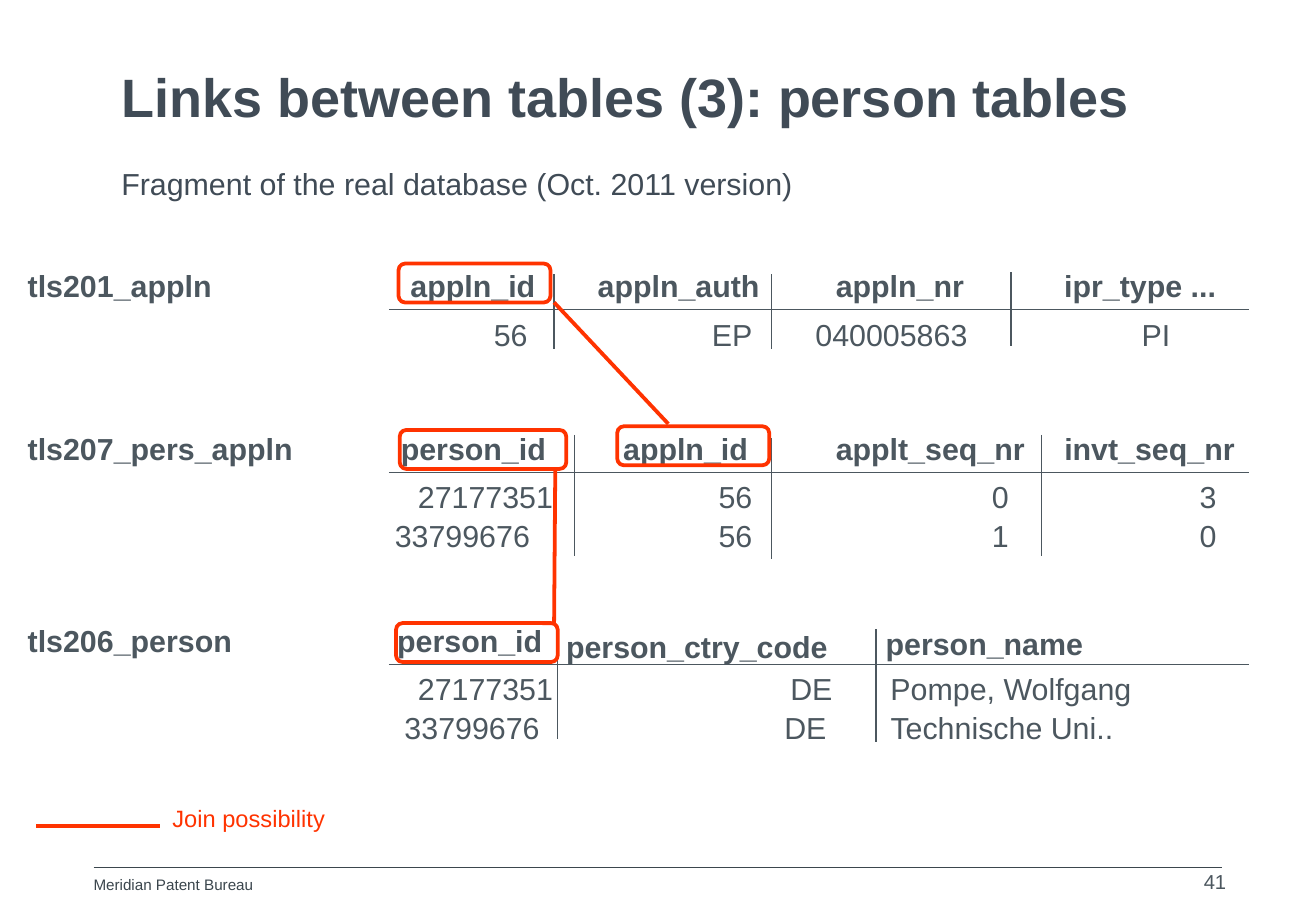
from dataclasses import dataclass

from lxml import etree
from pptx import Presentation
from pptx.dml.color import RGBColor
from pptx.enum.shapes import MSO_CONNECTOR, MSO_SHAPE
from pptx.enum.text import MSO_ANCHOR, PP_ALIGN
from pptx.oxml.ns import qn
from pptx.util import Inches, Pt

LEFT, RIGHT = PP_ALIGN.LEFT, PP_ALIGN.RIGHT
TOP, MIDDLE = MSO_ANCHOR.TOP, MSO_ANCHOR.MIDDLE
STRAIGHT, ROUNDED = MSO_CONNECTOR.STRAIGHT, MSO_SHAPE.ROUNDED_RECTANGLE


@dataclass(frozen=True)
class Theme:
    font: str = "Arial"
    title: str = "404B56"
    ink: str = "4C575F"
    footer: str = "3B464D"
    join: str = "FF3300"
    title_size: int = 32
    body_size: int = 18
    legend_size: int = 14
    number_size: int = 12
    footer_size: int = 9
    rule_width: float = 0.75
    join_width: float = 2.25


THEME = Theme()
WIDTH, HEIGHT = 10.83, 7.5
NAME_LEFT, RULE_LEFT, RULE_RIGHT = 0.13, 3.2, 10.28
LINE_HEIGHT, ROW_STEP = 0.4, 0.32

# Columns: (heading, left, width, rise above the rule), value alignment,
# then one (value, left, width) per row. Dividers: (x, top, bottom).
TABLES = [
    {
        "name": ("tls201_appln", 1.73),
        "rule": 2.55,
        "dividers": [(4.56, 2.26, 2.87), (6.35, 2.26, 2.87), (8.32, 2.24, 2.85)],
        "columns": [
            (("appln_id", 3.28, 1.24, 0.4), RIGHT, [("56", 3.96, 0.48)]),
            (("appln_auth", 4.82, 1.55, 0.4), RIGHT, [("EP", 5.69, 0.6)]),
            (("appln_nr", 6.78, 1.27, 0.4), RIGHT, [("040005863", 6.59, 1.47)]),
            (("ipr_type ...", 8.66, 1.46, 0.4), RIGHT, [("PI", 9.29, 0.44)]),
        ],
    },
    {
        "name": ("tls207_pers_appln", 2.4),
        "rule": 3.89,
        "dividers": [(4.73, 3.58, 4.58), (6.35, 3.61, 4.6), (8.57, 3.58, 4.58)],
        "columns": [
            (("person_id", 3.2, 1.41, 0.4), RIGHT,
             [("27177351", 3.32, 1.33), ("33799676", 3.13, 1.33)]),
            (("appln_id", 5.03, 1.24, 0.4), RIGHT,
             [("56", 5.81, 0.48), ("56", 5.81, 0.48)]),
            (("applt_seq_nr", 6.78, 1.77, 0.4), RIGHT,
             [("0", 8.06, 0.34), ("1", 8.06, 0.34)]),
            (("invt_seq_nr", 8.66, 1.62, 0.4), RIGHT,
             [("3", 9.77, 0.34), ("0", 9.77, 0.34)]),
        ],
    },
    {
        "name": ("tls206_person", 1.9),
        "rule": 5.47,
        "dividers": [(4.59, 5.15, 6.08), (7.21, 5.18, 6.11)],
        "columns": [
            (("person_id", 3.17, 1.41, 0.4), RIGHT,
             [("27177351", 3.32, 1.33), ("33799676", 3.21, 1.33)]),
            (("person_ctry_code", 4.56, 2.38, 0.35), RIGHT,
             [("DE", 6.35, 0.6), ("DE", 6.3, 0.6)]),
            (("person_name", 7.19, 1.84, 0.37), LEFT,
             [("Pompe, Wolfgang", 7.23, 2.2), ("Technische Uni..", 7.23, 2.05)]),
        ],
    },
]

# Key frames: (left, top, width)
KEY_FRAMES = [(3.28, 2.17, 1.25), (5.08, 3.51, 1.25), (3.29, 3.54, 1.37), (3.26, 5.13, 1.33)]
FRAME_HEIGHT = 0.32
JOIN_LINES = [(4.56, 2.49, 5.5, 3.49), (4.57, 3.86, 4.56, 5.13), (0.3, 6.8, 1.32, 6.8)]

# Texts outside the tables: text, (left, top, width, height), format
LABELS = [
    ("Meridian Patent Bureau", (0.77, 7.21, 1.84, 0.25),
     {"size": THEME.footer_size, "color": THEME.footer, "inset": 0}),
    ("41", (9.51, 7.14, 0.68, 0.24),
     {"size": THEME.number_size, "align": RIGHT, "anchor": MIDDLE, "wrap": True}),
    ("Links between tables (3): person tables", (0.9, 0.44, 9.47, 0.7),
     {"size": THEME.title_size, "color": THEME.title, "bold": True,
      "anchor": MIDDLE, "wrap": True}),
    ("Fragment of the real database (Oct. 2011 version)", (0.9, 1.31, 9.1, 0.47),
     {"color": THEME.title, "wrap": True}),
    ("Join possibility", (1.32, 6.57, 1.48, 0.34),
     {"size": THEME.legend_size, "color": THEME.join}),
]


def add_text(slide, text, box, size=THEME.body_size, color=THEME.ink, bold=False,
             align=LEFT, anchor=TOP, wrap=False, inset=None):
    frame = slide.shapes.add_textbox(*map(Inches, box)).text_frame
    frame.word_wrap = wrap
    frame.vertical_anchor = anchor
    if inset is not None:
        for side in ("left", "top", "right", "bottom"):
            setattr(frame, f"margin_{side}", Inches(inset))
    paragraph = frame.paragraphs[0]
    paragraph.alignment = align
    run = paragraph.add_run()
    run.text = text
    formats = {"name": THEME.font, "size": Pt(size), "bold": bold}
    for attribute, value in formats.items():
        setattr(run.font, attribute, value)
    run.font.color.rgb = RGBColor.from_string(color)


def style_line(shape, color, width):
    shape.line.color.rgb = RGBColor.from_string(color)
    shape.line.width = Pt(width)


def add_line(slide, ends, color=THEME.ink, width=THEME.rule_width):
    connector = slide.shapes.add_connector(STRAIGHT, *map(Inches, ends))
    style_line(connector, color, width)
    etree.SubElement(connector._element.spPr, qn("a:effectLst"))


def add_table_fragment(slide, table):
    """Draw one database table: name, rule, dividers, headings and values."""
    rule = table["rule"]
    name, name_width = table["name"]
    add_text(slide, name, (NAME_LEFT, rule - LINE_HEIGHT, name_width, LINE_HEIGHT), bold=True)
    add_line(slide, (RULE_LEFT, rule, RULE_RIGHT, rule))
    for x, top, bottom in table["dividers"]:
        add_line(slide, (x, top, x, bottom))
    for (heading, left, width, rise), align, values in table["columns"]:
        add_text(slide, heading, (left, rule - rise, width, LINE_HEIGHT), bold=True)
        for row, (value, value_left, value_width) in enumerate(values):
            box = (value_left, rule + row * ROW_STEP, value_width, LINE_HEIGHT)
            add_text(slide, value, box, align=align)


def add_key_frame(slide, left, top, width):
    shape = slide.shapes.add_shape(ROUNDED, *map(Inches, (left, top, width, FRAME_HEIGHT)))
    shape.shadow.inherit = False
    shape.fill.background()
    style_line(shape, THEME.join, THEME.join_width)


def main():
    presentation = Presentation()
    presentation.slide_width, presentation.slide_height = Inches(WIDTH), Inches(HEIGHT)
    slide = presentation.slides.add_slide(presentation.slide_layouts[6])
    add_line(slide, (0.77, 7.14, 10.06, 7.14), color=THEME.footer)
    for text, box, formats in LABELS:
        add_text(slide, text, box, **formats)
    for table in TABLES:
        add_table_fragment(slide, table)
    for key_frame in KEY_FRAMES:
        add_key_frame(slide, *key_frame)
    for ends in JOIN_LINES:
        add_line(slide, ends, THEME.join, THEME.join_width)
    presentation.save("out.pptx")


if __name__ == "__main__":
    main()
